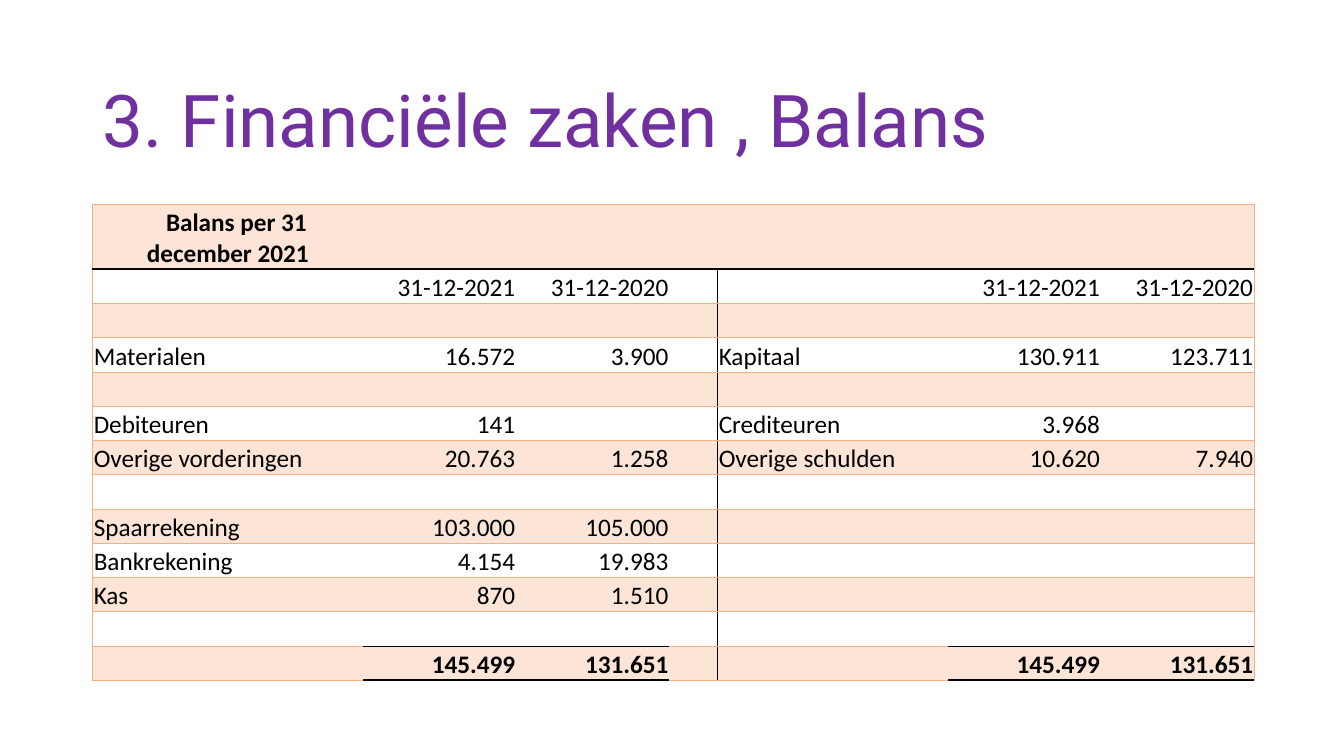
"""Build the balance sheet slide with its title and table."""
from dataclasses import dataclass

from lxml.etree import SubElement
from pptx import Presentation
from pptx.dml.color import RGBColor as RGB
from pptx.enum.text import MSO_ANCHOR as Anchor, PP_ALIGN as Align
from pptx.oxml.ns import qn
from pptx.util import Inches, Pt


@dataclass(frozen=True)
class Theme:
    heading: str = "7030A0"
    ink: str = "000000"
    band: str = "FCE4D6"
    rule: str = "F4B084"
    heading_font: str = "Roboto"
    table_font: str = "Calibri"
    heading_size: int = 52
    table_size: int = 18


theme = Theme()
VALUE_COLUMNS = (1, 2, 5, 6)
COLUMN_WIDTHS = (2.68, 1.52, 1.52, 0.48, 2.28, 1.52, 1.52)
EMPTY = ("",) * 7
BALANCE = [
    ("Balans per 31 december 2021", "", "", "", "", "", ""),
    ("", "31-12-2021", "31-12-2020", "", "", "31-12-2021", "31-12-2020"),
    EMPTY,
    ("Materialen", "16.572", "3.900", "", "Kapitaal", "130.911", "123.711"),
    EMPTY,
    ("Debiteuren", "141", "", "", "Crediteuren", "3.968", ""),
    ("Overige vorderingen", "20.763", "1.258", "", "Overige schulden", "10.620", "7.940"),
    EMPTY,
    ("Spaarrekening", "103.000", "105.000", "", "", "", ""),
    ("Bankrekening", "4.154", "19.983", "", "", "", ""),
    ("Kas", "870", "1.510", "", "", "", ""),
    EMPTY,
    ("", "145.499", "131.651", "", "", "145.499", "131.651"),
]
TOTAL_ROW = len(BALANCE) - 1
THIN = (theme.rule, 0.5)
DIVIDER = (theme.ink, 0.5)
HEADER_RULE = (theme.ink, 1.5)
TOTAL_RULES = {TOTAL_ROW: DIVIDER, TOTAL_ROW + 1: (theme.ink, 2)}
VERTICAL_RULES = {0: THIN, 4: DIVIDER, 7: THIN}


def horizontal_rule(edge, column):
    if edge == 1:
        return HEADER_RULE
    return TOTAL_RULES.get(edge, THIN) if column in VALUE_COLUMNS else THIN


def draw_border(cell, side, rule):
    line = SubElement(cell._tc.get_or_add_tcPr(), qn(f"a:ln{side}"))
    if rule is None:
        line.set("w", "0")
        SubElement(line, qn("a:noFill"))
        return
    color, width = rule
    line.set("w", str(Pt(width)))
    SubElement(SubElement(line, qn("a:solidFill")), qn("a:srgbClr")).set("val", color)


deck = Presentation()
deck.slide_width, deck.slide_height = Inches(13.33), Inches(7.5)
slide = deck.slides.add_slide(deck.slide_layouts[5])

heading = slide.shapes.title
heading_place = {"left": 0.92, "top": 0.61, "width": 11.5, "height": 1.24}
for side, length in heading_place.items():
    setattr(heading, side, Inches(length))
heading.text_frame.text = "3. Financiële zaken , Balans"
heading.text_frame.vertical_anchor = Anchor.MIDDLE
heading_line = heading.text_frame.paragraphs[0]
heading_line.alignment = Align.LEFT
heading_line.line_spacing = 0.9
heading_font = heading_line.runs[0].font
heading_font.name = theme.heading_font
heading_font.size = Pt(theme.heading_size)
heading_font.color.rgb = RGB.from_string(theme.heading)

balance = slide.shapes.add_table(
    len(BALANCE), len(COLUMN_WIDTHS), Inches(0.92), Inches(2.03), Inches(11.5), Inches(4.7)
).table
balance.first_row = balance.horz_banding = False
for column, width in zip(balance.columns, COLUMN_WIDTHS):
    column.width = Inches(width)

cell_margins = {"margin_left": 0.01, "margin_right": 0.01, "margin_top": 0.01, "margin_bottom": 0}
for r, entries in enumerate(BALANCE):
    balance.rows[r].height = Inches(0.34 if r else 0.64)
    for c, entry in enumerate(entries):
        cell = balance.cell(r, c)
        for margin, length in cell_margins.items():
            setattr(cell, margin, Inches(length))
        cell.vertical_anchor = Anchor.BOTTOM

        for side, edge in (("L", c), ("R", c + 1)):
            draw_border(cell, side, None if r == 0 and edge == 4 else VERTICAL_RULES.get(edge))
        for side, edge in (("T", r), ("B", r + 1)):
            draw_border(cell, side, horizontal_rule(edge, c))

        if r % 2 == 0:
            cell.fill.solid()
            cell.fill.fore_color.rgb = RGB.from_string(theme.band)
        else:
            cell.fill.background()

        if entry:
            cell.text = entry
            paragraph = cell.text_frame.paragraphs[0]
            paragraph.alignment = Align.RIGHT if c in VALUE_COLUMNS else Align.LEFT
            font = paragraph.runs[0].font
            font.name = theme.table_font
            font.size = Pt(theme.table_size)
            font.bold = r in (0, TOTAL_ROW)
            font.color.rgb = RGB.from_string(theme.ink)

caption = balance.cell(0, 0)
caption.margin_left = caption.margin_right = Inches(0.05)
caption_line = caption.text_frame.paragraphs[0]
caption_line.alignment = Align.CENTER
caption_line._p.get_or_add_pPr().set("indent", str(Inches(0.17)))

deck.save("out.pptx")
